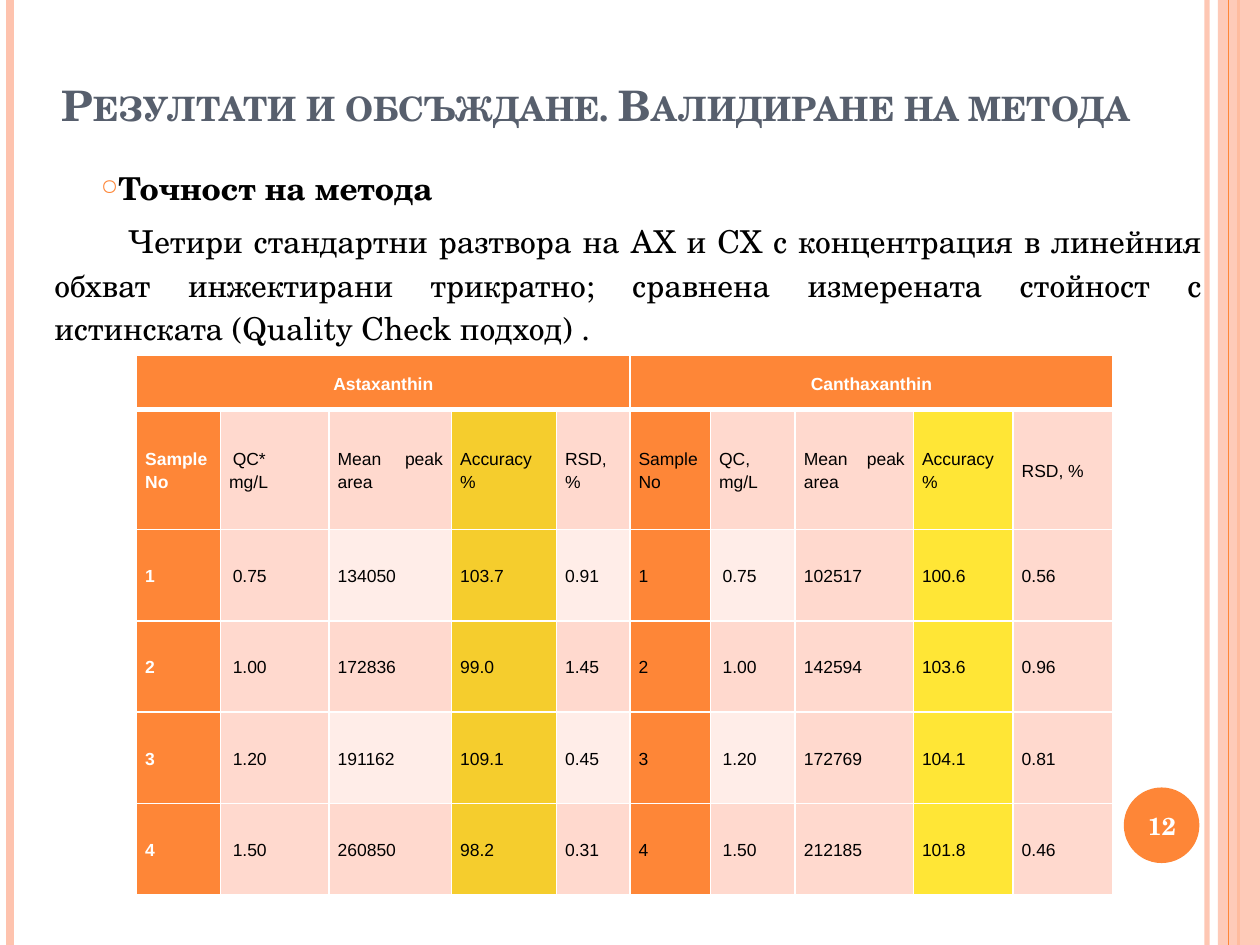
"""Build the method validation slide with its accuracy table."""
from copy import deepcopy

from pptx import Presentation
from pptx.dml.color import RGBColor as RGB
from pptx.enum.shapes import MSO_CONNECTOR as LINK, MSO_SHAPE as FORM
from pptx.enum.text import MSO_ANCHOR as ANCHOR, MSO_AUTO_SIZE as AUTO, PP_ALIGN as ALIGN
from pptx.oxml import parse_xml
from pptx.oxml.ns import nsdecls, qn
from pptx.util import Pt

ORANGE = RGB(0xFE, 0x86, 0x37)
PEACH = RGB(0xFE, 0xC3, 0xAE)
SLATE = RGB(0x57, 0x5F, 0x6D)
BLACK = RGB(0, 0, 0)
WHITE = RGB(0xFF, 0xFF, 0xFF)
PINK = RGB(0xFF, 0xD9, 0xCE)
PALE = RGB(0xFF, 0xED, 0xE8)
GOLD = RGB(0xF5, 0xCD, 0x2D)
LEMON = RGB(0xFF, 0xE6, 0x36)
SERIF = "TeX Gyre Schola"


def write(para, text, font, color, layout, indent=0):
    para.text = text
    for name, value in layout.items():
        setattr(para, name, value)
    props = para._p.get_or_add_pPr()
    props.set("marL", "0")
    props.set("indent", str(Pt(indent)))
    for run in para.runs:
        for name, value in font.items():
            setattr(run.font, name, value)
        run.font.color.rgb = color
    for gap in para._p.findall(qn("a:br")):
        gap.append(deepcopy(para.runs[0]._r.rPr))


def fade(shape, share):
    for color in shape._element.spPr.iter(qn("a:srgbClr")):
        color.append(parse_xml(f'<a:alpha {nsdecls("a")} val="{share * 1000}"/>'))


prs = Presentation()
prs.slide_width, prs.slide_height = Pt(720), Pt(540)
slide = prs.slides.add_slide(prs.slide_layouts[5])
shapes = slide.shapes

stripes = [(689.8, PEACH, 3, 93), (5.8, PEACH, 4.5, 100), (707.8, ORANGE, 1.5, 100),
           (None, PEACH, 0, 87), (702, ORANGE, 0.75, 100)]
for x, color, width, share in stripes:
    if x is None:
        stripe = shapes.add_shape(FORM.RECTANGLE, Pt(696), Pt(0), Pt(24), Pt(540))
        stripe.shadow.inherit = False
        stripe.fill.solid()
        stripe.fill.fore_color.rgb = color
        stripe.line.fill.background()
    else:
        stripe = shapes.add_connector(LINK.STRAIGHT, Pt(x), Pt(0), Pt(x), Pt(540))
        stripe.line.color.rgb = color
        stripe.line.width = Pt(width)
        stripe._element.spPr.append(parse_xml(f'<a:effectLst {nsdecls("a")}/>'))
    if share < 100:
        fade(stripe, share)

badge = shapes.add_shape(FORM.OVAL, Pt(642.2), Pt(450), Pt(43.2), Pt(43.2))
badge.shadow.inherit = False
badge.fill.solid()
badge.fill.fore_color.rgb = ORANGE
badge.line.fill.background()

title = shapes.title
title.left, title.top, title.width, title.height = Pt(28), Pt(18), Pt(648), Pt(60)
frame = title.text_frame
frame.auto_size = AUTO.NONE
frame.vertical_anchor = ANCHOR.BOTTOM
write(frame.paragraphs[0], "Резултати и обсъждане. Валидиране на метода",
      {"size": Pt(24), "name": SERIF, "bold": True}, SLATE, {"alignment": ALIGN.LEFT})
frame.paragraphs[0].runs[0]._r.rPr.set("cap", "small")

number = shapes.add_textbox(Pt(640), Pt(451.4), Pt(48), Pt(41)).text_frame
number.word_wrap = True
number.vertical_anchor = ANCHOR.MIDDLE
write(number.paragraphs[0], "12", {"size": Pt(14), "name": SERIF, "bold": True},
      WHITE, {"alignment": ALIGN.CENTER})

body = shapes.add_textbox(Pt(24), Pt(90), Pt(670), Pt(113)).text_frame
body.word_wrap = True
flow = {"line_spacing": 1.14, "space_before": Pt(6)}
head = body.paragraphs[0]
write(head, "Точност на метода", {"size": Pt(18), "name": SERIF, "bold": True},
      BLACK, flow, 26.6)
for mark in (f'<a:buClr {nsdecls("a")}><a:srgbClr val="{ORANGE}"/></a:buClr>',
             f'<a:buSzPct {nsdecls("a")} val="70000"/>',
             f'<a:buChar {nsdecls("a")} char="○"/>'):
    head._p.pPr.append(parse_xml(mark))
write(body.add_paragraph(),
      "\t Четири стандартни разтвора на AX и CX с концентрация в линейния обхват "
      "инжектирани трикратно; сравнена измерената стойност с истинската "
      "(Quality Check подход) . ",
      {"size": Pt(18), "name": SERIF, "bold": False}, BLACK,
      flow | {"alignment": ALIGN.JUSTIFY})

rows = [
    ["Astaxanthin", "", "", "", "", "Canthaxanthin", "", "", "", ""],
    ["Sample\vNo", "QC*\vmg/L", "Mean peak area", "Accuracy\v%", "RSD, %",
     "Sample\vNo", "QC, mg/L", "Mean peak area", "Accuracy\v%", "RSD, %"],
    ["1", "0.75", "134050", "103.7", "0.91", "1", "0.75", "102517", "100.6", "0.56"],
    ["2", "1.00", "172836", "99.0", "1.45", "2", "1.00", "142594", "103.6", "0.96"],
    ["3", "1.20", "191162", "109.1", "0.45", "3", "1.20", "172769", "104.1", "0.81"],
    ["4", "1.50", "260850", "98.2", "0.31", "4", "1.50", "212185", "101.8", "0.46"],
]
widths = [48, 62, 70, 60, 42, 46, 48.5, 67.5, 57, 57]
heights = [31, 68.4] + [52.2] * 4
fills = [ORANGE, PINK, PINK, GOLD, PINK, ORANGE, PINK, PINK, LEMON, PINK]
indents = {1: 2, 6: 2, 9: -1}
banded = (2, 4, 6)
box = {"margin_left": Pt(5), "margin_right": Pt(5), "margin_top": 0,
       "margin_bottom": 0, "vertical_anchor": ANCHOR.MIDDLE}

table = shapes.add_table(len(rows), len(widths), Pt(78), Pt(203.2),
                         Pt(sum(widths)), Pt(sum(heights))).table
for col, width in zip(table.columns, widths):
    col.width = Pt(width)
for row, height in zip(table.rows, heights):
    row.height = Pt(height)
for start in (0, 5):
    table.cell(0, start).merge(table.cell(0, start + 4))

for r, row in enumerate(rows):
    for c, text in enumerate(row):
        cell = table.cell(r, c)
        for name, value in box.items():
            setattr(cell, name, value)
        for side in "LRTB":
            thick = 3 if (r, side) in ((0, "B"), (1, "T")) else 1
            cell._tc.get_or_add_tcPr().append(parse_xml(
                f'<a:ln{side} {nsdecls("a")} w="{Pt(thick)}"><a:solidFill>'
                f'<a:srgbClr val="{WHITE}"/></a:solidFill></a:ln{side}>'))
        cell.fill.solid()
        light = r in (2, 4) and c in banded
        cell.fill.fore_color.rgb = ORANGE if r == 0 else PALE if light else fills[c]
        if not text:
            continue
        strong = r == 0 or c == 0
        indent = -1 if (r, c) == (0, 5) else 0 if r == 0 or (r, c) == (1, 6) else indents.get(c, 0)
        write(cell.text_frame.paragraphs[0], text,
              {"size": Pt(10), "name": "Arial", "bold": strong},
              WHITE if strong else BLACK,
              {"alignment": ALIGN.CENTER if r == 0 else ALIGN.JUSTIFY,
               "line_spacing": 1.15}, indent)

prs.save("out.pptx")
